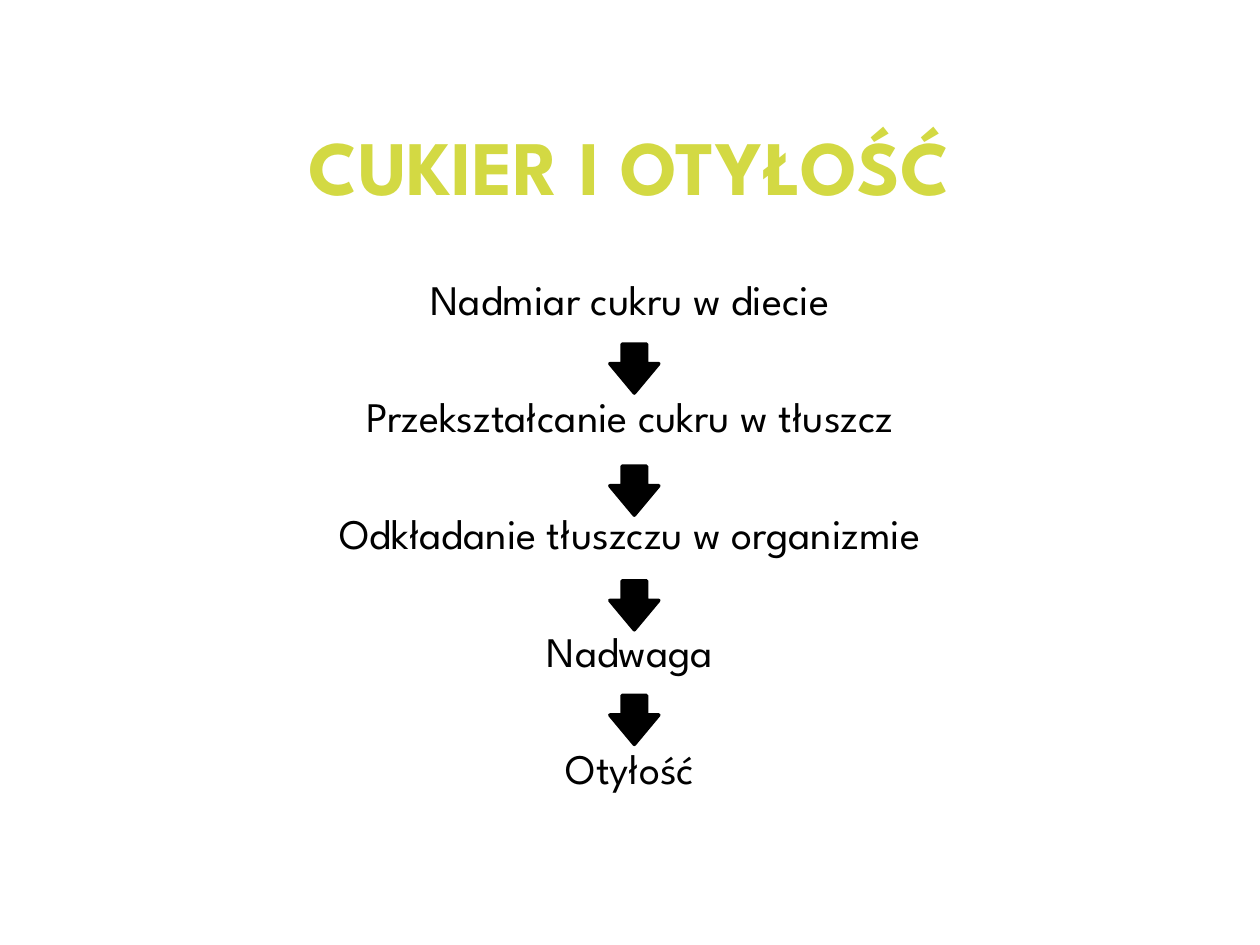
from dataclasses import dataclass

from lxml.etree import SubElement
from pptx import Presentation
from pptx.dml.color import RGBColor
from pptx.enum.shapes import MSO_SHAPE as Shape
from pptx.enum.text import MSO_ANCHOR as Anchor, MSO_AUTO_SIZE as AutoSize, PP_ALIGN as Align
from pptx.oxml.ns import qn
from pptx.util import Pt


@dataclass(frozen=True)
class Theme:
    font: str = "League Spartan"
    background: RGBColor = RGBColor(0xFF, 0xFF, 0xFF)
    title: RGBColor = RGBColor(0xD3, 0xD9, 0x43)
    ink: RGBColor = RGBColor(0, 0, 0)
    title_size: int = 44
    step_size: int = 24
    line_height: int = 28
    step_gap: int = 39
    outline: int = 2


THEME = Theme()
TITLE_BOX = (36, 49, 648, 90)
STEPS_BOX = (36, 153.4, 648, 356.4)
STEPS = [
    "Nadmiar cukru w diecie",
    "Przekształcanie cukru w tłuszcz",
    "Odkładanie tłuszczu w organizmie",
    "Nadwaga",
    "Otyłość",
]
ARROW_LEFT = 312.5
ARROW_TOPS = [43.2, 113, 178.5, 244]
ARROW_SIZE = 28


def place(shape, box):
    shape.left, shape.top, shape.width, shape.height = map(Pt, box)


def format_font(font, size, color, bold=False):
    font.name = THEME.font
    font.size = Pt(size)
    font.bold = bold
    font.color.rgb = color


def fill_title(shape, box):
    place(shape, box)
    frame = shape.text_frame
    frame.text = "CUKIER I OTYŁOŚĆ"
    frame.vertical_anchor = Anchor.MIDDLE
    frame.auto_size = AutoSize.NONE
    paragraph = frame.paragraphs[0]
    paragraph.alignment = Align.CENTER
    format_font(paragraph.runs[0].font, THEME.title_size, THEME.title, bold=True)


def fill_steps(shape, box):
    place(shape, box)
    frame = shape.text_frame
    frame.text = "\n".join(STEPS)
    frame.vertical_anchor = Anchor.TOP
    frame.auto_size = AutoSize.NONE
    for index, paragraph in enumerate(frame.paragraphs):
        properties = paragraph._p.get_or_add_pPr()
        properties.set("marL", "0")
        properties.set("indent", "0")
        SubElement(properties, qn("a:buNone"))
        paragraph.alignment = Align.CENTER
        paragraph.line_spacing = Pt(THEME.line_height)
        paragraph.space_before = Pt(THEME.step_gap if index else 0)
        format_font(paragraph.runs[0].font, THEME.step_size, THEME.ink)


def add_arrows(slide, box):
    left, top = box[:2]
    for offset in ARROW_TOPS:
        arrow = slide.shapes.add_shape(
            Shape.DOWN_ARROW, Pt(left + ARROW_LEFT), Pt(top + offset), Pt(ARROW_SIZE), Pt(ARROW_SIZE)
        )
        arrow.adjustments[0] = 0.5
        arrow.adjustments[1] = 0.6
        arrow.shadow.inherit = False
        arrow.fill.solid()
        arrow.fill.fore_color.rgb = THEME.ink
        arrow.line.color.rgb = THEME.ink
        arrow.line.width = Pt(THEME.outline)


def main():
    presentation = Presentation()
    presentation.slide_width, presentation.slide_height = Pt(720), Pt(540)
    slide = presentation.slides.add_slide(presentation.slide_layouts[1])
    slide.background.fill.solid()
    slide.background.fill.fore_color.rgb = THEME.background
    fill_title(slide.shapes.title, TITLE_BOX)
    fill_steps(slide.placeholders[1], STEPS_BOX)
    add_arrows(slide, STEPS_BOX)
    presentation.save("out.pptx")


if __name__ == "__main__":
    main()
